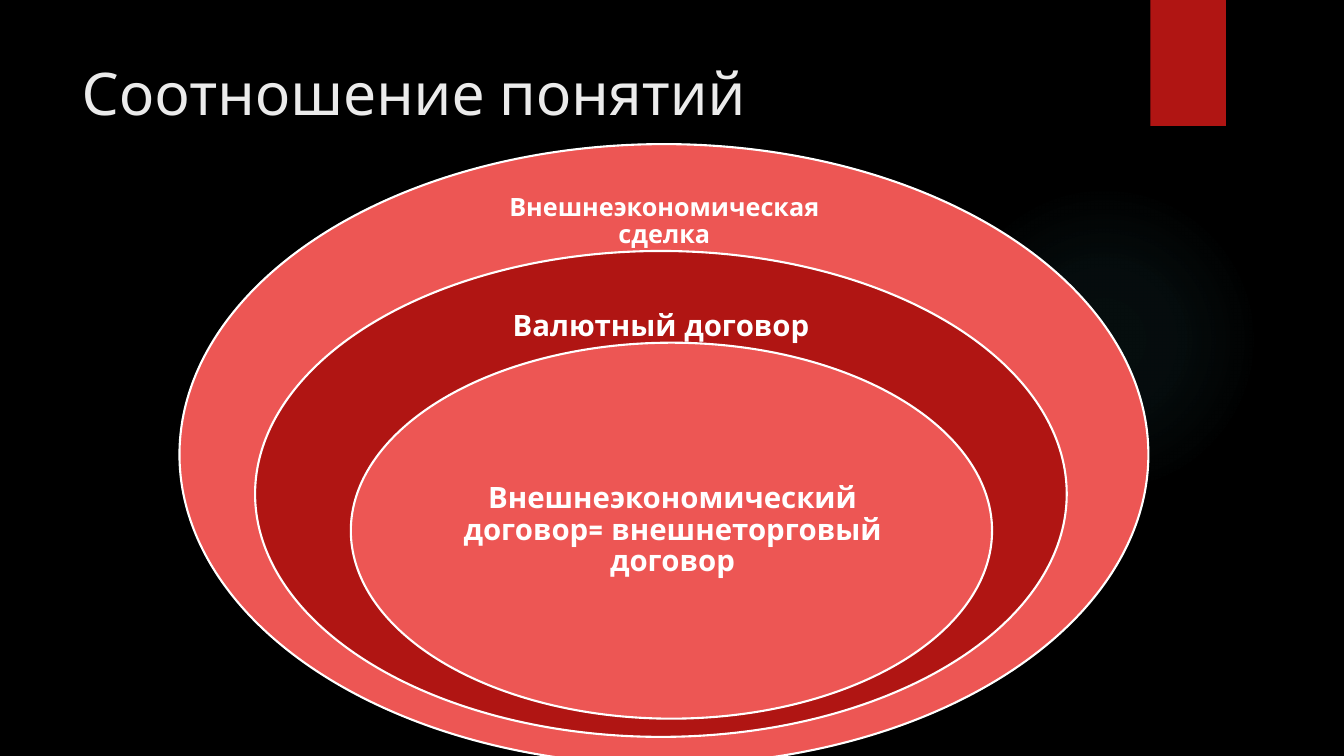
from lxml import etree
from pptx import Presentation
from pptx import util as u
from pptx.dml.color import RGBColor
from pptx.enum import shapes, text
from pptx.oxml import parse_xml
from pptx.oxml.ns import nsdecls, qn

# Content: lengths in px, 100 px to the inch
TITLE = "Соотношение понятий"
FONT = "League Spartan"
COLORS = {"back": "000000", "title": "EBEBEB", "white": "FFFFFF",
          "red": "B01513", "coral": "ED5654", "glow": "50B9C1"}
# label, ellipse box, fill, label box, inset, font size
CIRCLES = [
    ("Внешнеэкономическая сделка", (178, 143, 961, 616), "coral",
     (491, 174, 336, 92), 14, 18),
    ("Валютный договор", (253, 249, 805, 482), "red",
     (468, 279, 375, 90), 16, 21),
    ("Внешнеэкономический договор= внешнеторговый договор",
     (348, 340, 636, 373), "coral", (442, 433, 450, 187), 16, 21),
]
GLOW_STOPS = [(0, 7), (36, 6), (69, 0)]  # position %, opacity %


def px(n):
    return u.Emu(n * 9144)


def box(values):
    return [px(v) for v in values]


def color(name):
    return RGBColor.from_string(COLORS[name])


def add_shape(kind, place, fill, line=None):
    sp = slide.shapes.add_shape(kind, *box(place))
    sp.shadow.inherit = False
    sp.fill.solid()
    sp.fill.fore_color.rgb = color(fill)
    if line:
        sp.line.color.rgb = color(line)
        sp.line.width = u.Pt(1.5)
    else:
        sp.line.fill.background()
    return sp


def set_text(tf, words, size, name, bold, align, inset):
    tf.text = words
    tf.word_wrap = True
    tf.auto_size = text.MSO_AUTO_SIZE.NONE
    tf.vertical_anchor = text.MSO_ANCHOR.MIDDLE
    tf.margin_left = tf.margin_right = px(inset)
    tf.margin_top = tf.margin_bottom = px(inset)
    p = tf.paragraphs[0]
    p.alignment = align
    font = p.runs[0].font
    font.name, font.size, font.bold = FONT, u.Pt(size), bold
    font.color.rgb = color(name)
    return p


prs = Presentation()
prs.slide_width, prs.slide_height = px(1333), px(750)
slide = prs.slides.add_slide(prs.slide_layouts[5])
slide.background.fill.solid()
slide.background.fill.fore_color.rgb = color("back")

# Soft glow and red tab
glow = add_shape(shapes.MSO_SHAPE.OVAL, (941, 183, 308, 308), "glow")
stops = "".join(
    f'<a:gs pos="{pos * 1000}"><a:srgbClr val="{COLORS["glow"]}">'
    f'<a:alpha val="{alpha * 1000}"/></a:srgbClr></a:gs>'
    for pos, alpha in GLOW_STOPS)
solid = glow._element.spPr.find(qn("a:solidFill"))
solid.getparent().replace(solid, parse_xml(
    f'<a:gradFill {nsdecls("a")}><a:gsLst>{stops}</a:gsLst><a:path path="circle">'
    '<a:fillToRect l="50000" t="50000" r="50000" b="50000"/></a:path></a:gradFill>'))
add_shape(shapes.MSO_SHAPE.RECTANGLE, (1141, 0, 75, 125), "red")

# Title
title = slide.shapes.title
title.left, title.top, title.width, title.height = box((71, 50, 1029, 83))
set_text(title.text_frame, TITLE, 42, "title", False, text.PP_ALIGN.LEFT, 10)

# Nested ellipses with their labels
for label, place, fill, label_place, inset, size in CIRCLES:
    add_shape(shapes.MSO_SHAPE.OVAL, place, fill, "white")
    tb = slide.shapes.add_textbox(*box(label_place))
    p = set_text(tb.text_frame, label, size, "white", True,
                 text.PP_ALIGN.CENTER, inset)
    p.line_spacing = 0.9

prs.save("out.pptx")
